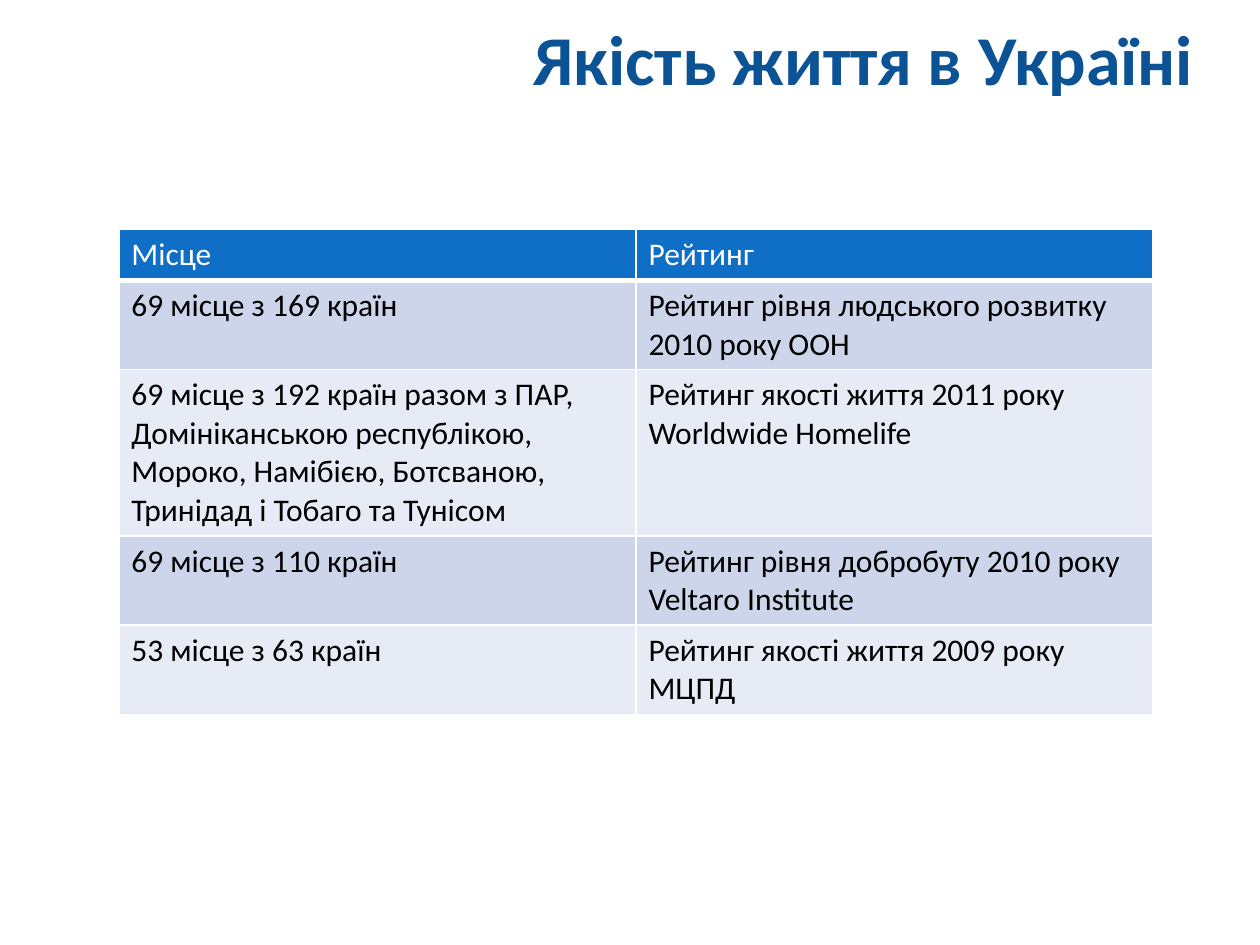
from typing import NamedTuple

from pptx import Presentation
from pptx.dml.color import RGBColor
from pptx.enum.text import MSO_ANCHOR, PP_ALIGN
from pptx.oxml import parse_xml
from pptx.oxml.ns import nsdecls
from pptx.util import Pt

FONT = "Calibri"
WHITE, BLACK, NAVY = "FFFFFF", "000000", "0B5395"
HEAD, BANDS = "0F6FC6", ("CCD5EA", "E7EBF5")


class Row(NamedTuple):
    place: str
    rank: str
    height: float


ROWS = [
    Row("Місце", "Рейтинг", 29),
    Row("69 місце з 169 країн",
        "Рейтинг рівня людського розвитку 2010 року ООН", 51),
    Row("69 місце з 192 країн разом з ПАР, Домініканською республікою, "
        "Мороко, Намібією, Ботсваною, Тринідад і Тобаго та Тунісом",
        "Рейтинг якості життя 2011 року Worldwide Homelife", 95),
    Row("69 місце з 110 країн",
        "Рейтинг рівня добробуту 2010 року Veltaro Institute", 51),
    Row("53 місце з 63 країн", "Рейтинг якості життя 2009 року МЦПД", 51),
]


def tint(code: str) -> RGBColor:
    return RGBColor.from_string(code)


def write(frame, text: str, size: float, color: str, bold: bool = False) -> None:
    run = frame.paragraphs[0].add_run()
    run.text = text
    run.font.name = FONT
    run.font.size = Pt(size)
    run.font.bold = bold
    run.font.color.rgb = tint(color)


def edge(cell, side: str, width: float) -> None:
    line = parse_xml(
        f'<a:{side} {nsdecls("a")} w="{Pt(width)}"><a:solidFill>'
        f'<a:srgbClr val="{WHITE}"/></a:solidFill></a:{side}>')
    cell._tc.get_or_add_tcPr().append(line)


def draw_cell(cell, text: str, num: int) -> None:
    top = num == 0
    # Borders come before the fill in the cell's XML
    for side in ("lnL", "lnR", "lnT", "lnB"):
        edge(cell, side, 3 if top and side == "lnB" else 1)
    cell.fill.solid()
    cell.fill.fore_color.rgb = tint(HEAD if top else BANDS[(num - 1) % 2])
    write(cell.text_frame, text, 18, WHITE if top else BLACK)


def draw_title(slide, text: str) -> None:
    box = slide.shapes.add_textbox(Pt(133.2), Pt(0), Pt(555.8), Pt(65.5))
    frame = box.text_frame
    frame.word_wrap = True
    frame.vertical_anchor = MSO_ANCHOR.MIDDLE
    frame.paragraphs[0].alignment = PP_ALIGN.RIGHT
    write(frame, text, 40, NAVY, bold=True)


def draw_table(slide, rows: list[Row]) -> None:
    high = sum(row.height for row in rows)
    table = slide.shapes.add_table(
        len(rows), 2, Pt(67.9), Pt(131.2), Pt(591), Pt(high)).table
    for num, row in enumerate(rows):
        table.rows[num].height = Pt(row.height)
        for col, text in enumerate((row.place, row.rank)):
            draw_cell(table.cell(num, col), text, num)


def main() -> None:
    deck = Presentation()
    deck.slide_width, deck.slide_height = Pt(720), Pt(540)
    slide = deck.slides.add_slide(deck.slide_layouts[6])

    # Heading
    draw_title(slide, "Якість життя в Україні")

    # Ranking table
    draw_table(slide, ROWS)

    deck.save("out.pptx")


if __name__ == "__main__":
    main()
